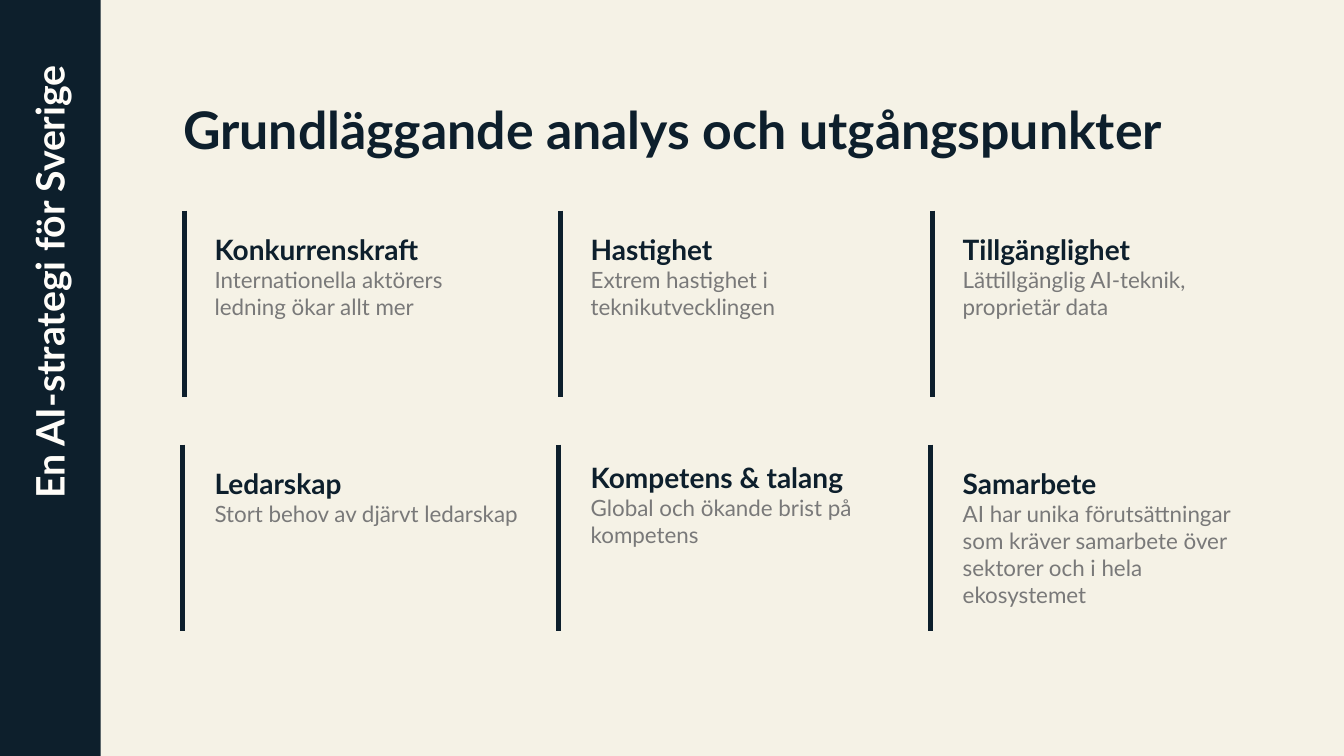
from dataclasses import dataclass

from lxml.etree import SubElement
from pptx import Presentation
from pptx.dml.color import RGBColor as Color
from pptx.enum.shapes import MSO_CONNECTOR as Link, MSO_SHAPE as Form
from pptx.oxml.ns import qn
from pptx.util import Inches, Pt


@dataclass(frozen=True)
class Theme:
    """Colours and type sizes of the slide."""
    font: str = "Lato"
    paper: str = "F5F2E6"
    navy: str = "0D1F2C"
    cream: str = "FFFDF9"
    gray: str = "797979"
    title: int = 37
    side: int = 28
    head: int = 20
    body: int = 16
    rule: float = 3.75


class Deck:
    """Draws styled elements on the current slide."""

    def __init__(self, theme):
        """Open a blank slide with the theme's background."""
        self.theme = theme
        self.prs = Presentation()
        self.prs.slide_width, self.prs.slide_height = Inches(13.33), Inches(7.5)
        self.slide = self.prs.slides.add_slide(self.prs.slide_layouts[6])
        fill = self.slide.background.fill
        fill.solid()
        fill.fore_color.rgb = Color.from_string(theme.paper)

    def panel(self, x, y, w, h, color):
        """Add a plain filled rectangle."""
        box = self.slide.shapes.add_shape(Form.RECTANGLE, *map(Inches, (x, y, w, h)))
        box.shadow.inherit = False
        box.fill.solid()
        box.fill.fore_color.rgb = Color.from_string(color)
        box.line.fill.background()

    def text(self, x, y, w, h, words, styles, top=0.05, space=None, turn=0):
        """Add a text box with one (size, colour, bold) style per line."""
        box = self.slide.shapes.add_textbox(*map(Inches, (x, y, w, h)))
        box.rotation = turn
        frame = box.text_frame
        frame.word_wrap = True
        frame.margin_top = Inches(top)
        para = frame.paragraphs[0]
        para.text = words
        para.line_spacing = space
        for run, (size, color, bold) in zip(para.runs, styles):
            font = run.font
            font.name, font.size, font.bold = self.theme.font, Pt(size), bold
            font.color.rgb = Color.from_string(color)

    def rule(self, x, y, h):
        """Add a thick vertical line."""
        ends = map(Inches, (x, y, x, y + h))
        line = self.slide.shapes.add_connector(Link.STRAIGHT, *ends)
        line.line.width = Pt(self.theme.rule)
        line.line.color.rgb = Color.from_string(self.theme.navy)
        SubElement(line._element.spPr, qn("a:effectLst"))

    def card(self, x, y, w, h, head, body, top, shift):
        """Add a heading and its body beside a vertical line."""
        look = self.theme
        self.rule(x - 0.2 - shift, y, 1.85)
        styles = (look.head, look.navy, True), (look.body, look.gray, False)
        self.text(x, y + 0.11, w, h, f"{head}\v{body}", styles, top)


LEFTS = 2.03, 5.76, 9.45
TOPS = 2.09, 4.41
CARDS = (
    (
        ("Konkurrenskraft", "Internationella aktörers ledning ökar allt mer", 3.06, 1.11, 0.11),
        ("Hastighet", "Extrem hastighet i teknikutvecklingen", 3.11, 1.1, 0.11),
        ("Tillgänglighet", "Lättillgänglig AI-teknik, proprietär data", 3.05, 1.1, 0.11),
    ),
    (
        ("Ledarskap", "Stort behov av djärvt ledarskap", 3.32, 1.02, 0.11),
        ("Kompetens & talang", "Global och ökande brist på kompetens", 2.92, 1.57, 0.05),
        ("Samarbete", "AI har unika förutsättningar som kräver samarbete över "
         "sektorer och i hela ekosystemet", 3.05, 2.22, 0.11),
    ),
)


def main():
    """Build and save the slide."""
    look = Theme()
    deck = Deck(look)
    deck.panel(0, 0, 1, 7.5, look.navy)
    deck.text(-1.89, 2.34, 4.85, 0.56, "En AI-strategi för Sverige",
              [(look.side, look.cream, True)], space=0.9, turn=270)
    deck.text(1.72, 0.99, 11.38, 0.85, "Grundläggande analys och utgångspunkter",
              [(look.title, look.navy, True)], space=0.9)
    for row, (y, cards) in enumerate(zip(TOPS, CARDS)):
        for x, (head, body, w, h, top) in zip(LEFTS, cards):
            deck.card(x, y, w, h, head, body, top, row * 0.02)
    deck.prs.save("out.pptx")


if __name__ == "__main__":
    main()
